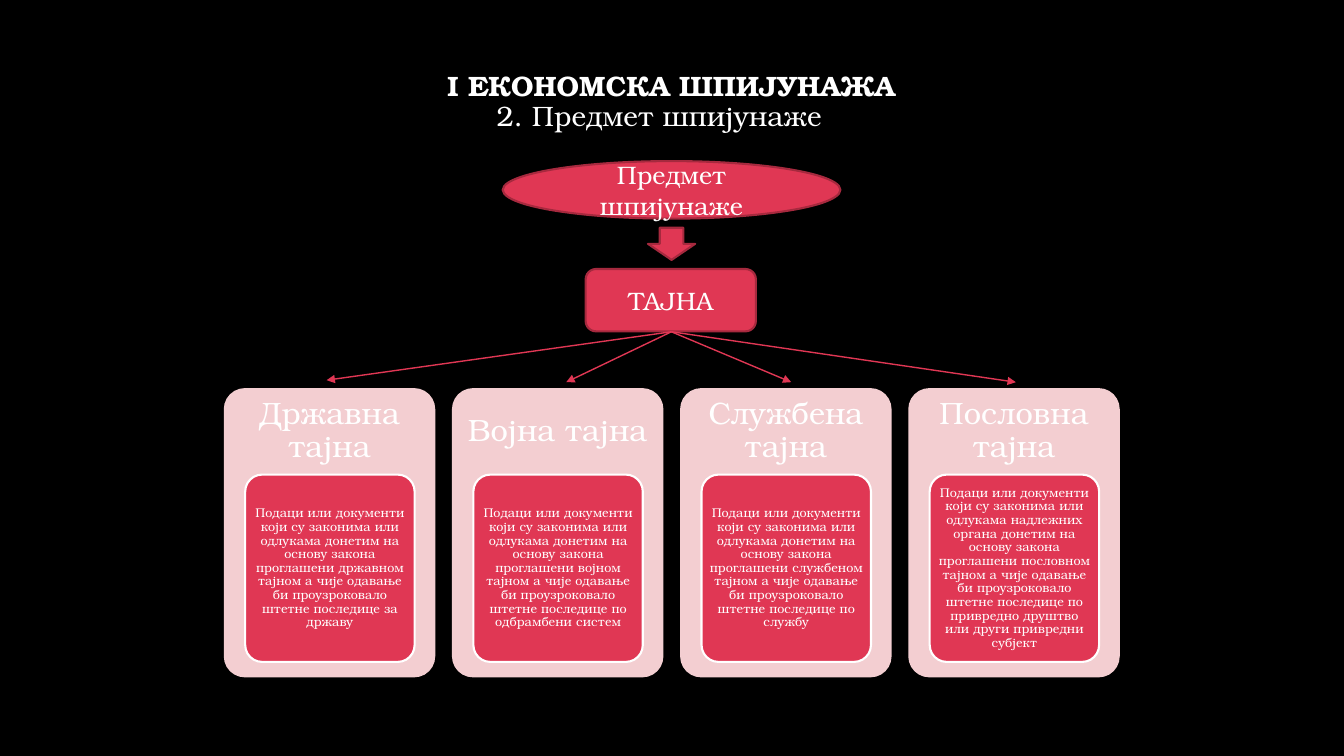
"""Build a slide on the subject of espionage and the four kinds of secret."""
from lxml import etree
from pptx import Presentation
from pptx.dml.color import RGBColor
from pptx.enum import shapes, text
from pptx.oxml import ns
from pptx.util import Cm, Pt

BLACK = RGBColor(0x00, 0x00, 0x00)
WHITE = RGBColor(0xFF, 0xFF, 0xFF)
RED = RGBColor(0xE0, 0x37, 0x54)
DARK_RED = RGBColor(0xA6, 0x29, 0x3E)
PINK = RGBColor(0xF3, 0xCE, 0xD1)
FONT = "TeX Gyre Bonum"
MIDDLE = text.MSO_ANCHOR.MIDDLE
KIND = shapes.MSO_SHAPE


def write(shape, words, size, spacing=1.0, anchor=MIDDLE, insets=(0.25, 0.13), bold=False):
    """Put one centred white paragraph into a shape."""
    frame = shape.text_frame
    frame.word_wrap = True
    frame.vertical_anchor = anchor
    frame.margin_left = frame.margin_right = Cm(insets[0])
    frame.margin_top = frame.margin_bottom = Cm(insets[1])
    paragraph = frame.paragraphs[0]
    paragraph.text = words
    paragraph.alignment = text.PP_ALIGN.CENTER
    paragraph.line_spacing = spacing
    paragraph.font.name = FONT
    paragraph.font.size = Pt(size)
    paragraph.font.bold = bold
    paragraph.font.color.rgb = WHITE


def draw(kind, left, top, width, height, fill, line=None):
    """Add a flat preset shape, with an outline if a line colour is given."""
    shape = page.shapes.add_shape(kind, Cm(left), Cm(top), Cm(width), Cm(height))
    shape.shadow.inherit = False
    shape.fill.solid()
    shape.fill.fore_color.rgb = fill
    if line is None:
        shape.line.fill.background()
    else:
        shape.line.color.rgb = line
        shape.line.width = Pt(1.5)
    return shape


deck = Presentation()
deck.slide_width, deck.slide_height = Cm(33.87), Cm(19.05)
page = deck.slides.add_slide(deck.slide_layouts[6])
page.background.fill.solid()
page.background.fill.fore_color.rgb = BLACK

title = page.shapes.add_textbox(Cm(2.54), Cm(1.7), Cm(28.75), Cm(1.02))
write(title, "I ЕКОНОМСКА ШПИЈУНАЖА", 20, 0.9, bold=True)
subtitle = page.shapes.add_textbox(Cm(2.24), Cm(2.18), Cm(28.75), Cm(13.39))
write(subtitle, "2. Предмет шпијунаже", 20, 1.2, text.MSO_ANCHOR.TOP)

OPENING = "Подаци или документи који су законима или одлукама "
HARM = " тајном а чије одавање би проузроковало штетне последице "
secrets = [
    ("Државна тајна", "", "државном", "за државу"),
    ("Војна тајна", "", "војном", "по одбрамбени систем"),
    ("Службена тајна", "", "службеном", "по службу"),
    ("Пословна тајна", "надлежних органа ", "пословном",
     "по привредно друштво или други привредни субјект"),
]
for index, (name, authority, declared, victim) in enumerate(secrets):
    left = 5.64 + 5.75 * index
    card = draw(KIND.ROUNDED_RECTANGLE, left, 9.78, 5.33, 7.29, PINK)
    card.adjustments[0] = 0.1
    heading = page.shapes.add_textbox(Cm(left), Cm(9.78), Cm(5.33), Cm(2.18))
    write(heading, name, 22, 0.9, insets=(0.23, 0.23))
    definition = draw(KIND.ROUNDED_RECTANGLE, left + 0.54, 11.96, 4.27, 4.72, RED, WHITE)
    definition.adjustments[0] = 0.1
    words = f"{OPENING}{authority}донетим на основу закона проглашени {declared}{HARM}{victim}"
    write(definition, words, 9, 0.9, insets=(0.08, 0.05))

subject = draw(KIND.OVAL, 12.67, 4.06, 8.51, 1.45, RED, DARK_RED)
write(subject, "Предмет шпијунаже", 18)
secret = draw(KIND.ROUNDED_RECTANGLE, 14.76, 6.78, 4.29, 1.57, RED, DARK_RED)
write(secret, "ТАЈНА", 18)

for end_x, end_y in [(8.23, 9.58), (14.27, 9.63), (19.94, 9.63), (25.6, 9.63)]:
    branch = page.shapes.add_connector(
        shapes.MSO_CONNECTOR.STRAIGHT, Cm(16.92), Cm(8.36), Cm(end_x), Cm(end_y))
    branch.line.color.rgb = RED
    branch.line.width = Pt(1)
    etree.SubElement(branch.line._get_or_add_ln(), ns.qn("a:tailEnd"), type="triangle")
    etree.SubElement(branch._element.spPr, ns.qn("a:effectLst"))

draw(KIND.DOWN_ARROW, 16.33, 5.74, 1.19, 0.81, RED, DARK_RED)

deck.save("out.pptx")
